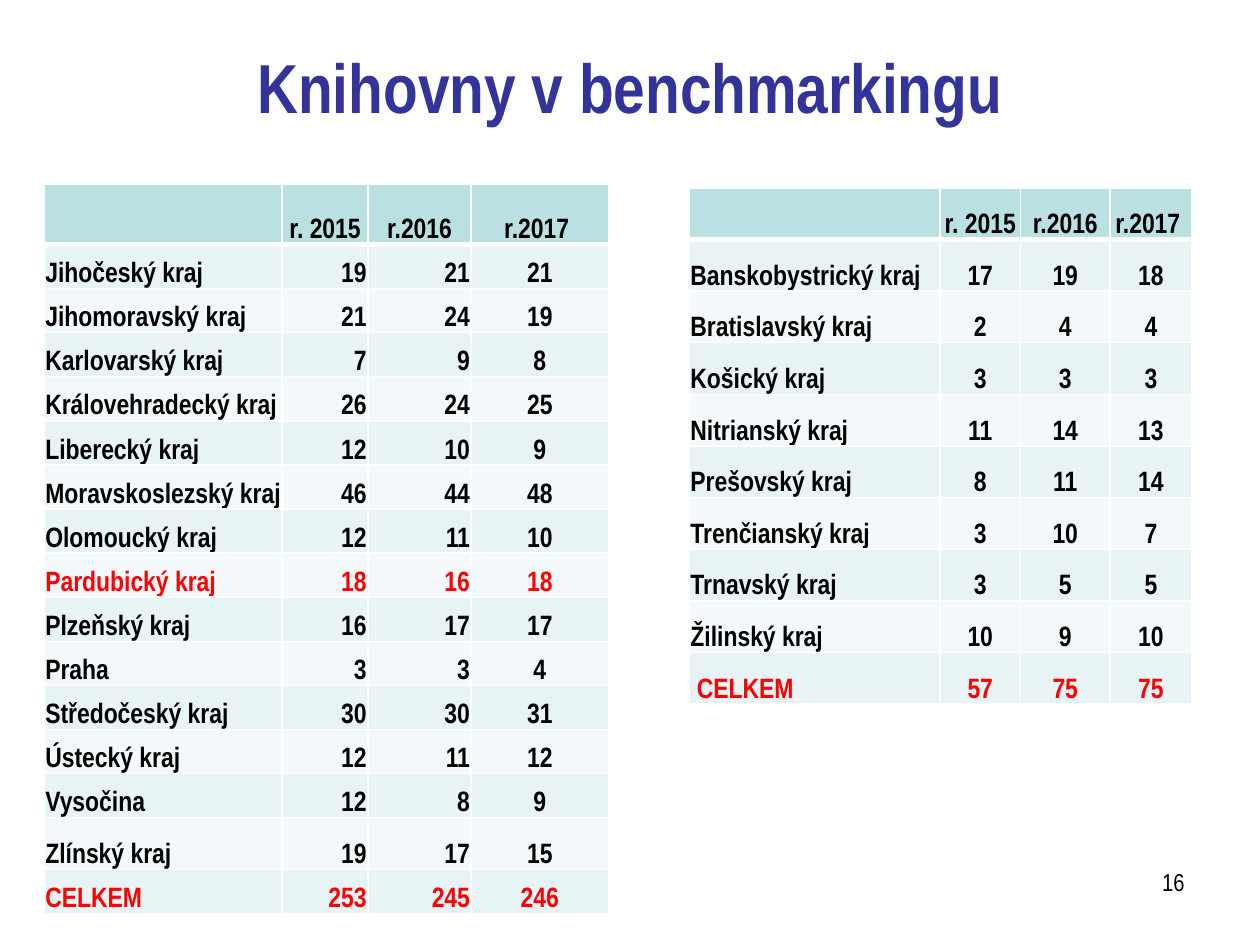
import pptx
import pptx.dml.color
import pptx.enum.text
import pptx.oxml
import pptx.util
from pptx.util import Inches

FONT = "Arial Narrow"
BLACK, RED, NAVY, WHITE = "000000", "FF0000", "333399", "FFFFFF"
HEADER_FILL, ROW_FILLS = "BBE0E3", ("E7F3F4", "F3F9FA")
ALIGN = pptx.enum.text.PP_ALIGN
ANCHOR = pptx.enum.text.MSO_ANCHOR
HIGHLIGHTED = ("Pardubický kraj", "CELKEM", " CELKEM")
HEADER = ("", "r. 2015", "r.2016", "r.2017 ")

CZECH_REGIONS = [
    ("Jihočeský kraj", 19, 21, 21),
    ("Jihomoravský kraj", 21, 24, 19),
    ("Karlovarský kraj", 7, 9, 8),
    ("Královehradecký kraj", 26, 24, 25),
    ("Liberecký kraj", 12, 10, 9),
    ("Moravskoslezský kraj", 46, 44, 48),
    ("Olomoucký kraj", 12, 11, 10),
    ("Pardubický kraj", 18, 16, 18),
    ("Plzeňský kraj", 16, 17, 17),
    ("Praha", 3, 3, 4),
    ("Středočeský kraj", 30, 30, 31),
    ("Ústecký kraj", 12, 11, 12),
    ("Vysočina", 12, 8, 9),
    ("Zlínský kraj", 19, 17, 15),
    ("CELKEM", 253, 245, 246),
]
SLOVAK_REGIONS = [
    ("Banskobystrický kraj", 17, 19, 18),
    ("Bratislavský kraj", 2, 4, 4),
    ("Košický kraj", 3, 3, 3),
    ("Nitrianský kraj", 11, 14, 13),
    ("Prešovský kraj", 8, 11, 14),
    ("Trenčianský kraj", 3, 10, 7),
    ("Trnavský kraj", 3, 5, 5),
    ("Žilinský kraj", 10, 9, 10),
    (" CELKEM", 57, 75, 75),
]


def rgb(color):
    return pptx.dml.color.RGBColor.from_string(color)


def style_paragraph(paragraph, text, size, color, align, bold):
    paragraph.text = text
    paragraph.alignment = align
    font = paragraph.font
    font.name, font.size, font.bold = FONT, pptx.util.Pt(size), bold
    font.color.rgb = rgb(color)


def add_text(slide, text, left, top, width, height, size, color, align,
             bold=False, anchor=ANCHOR.TOP):
    frame = slide.shapes.add_textbox(
        Inches(left), Inches(top), Inches(width), Inches(height)).text_frame
    frame.word_wrap = True
    frame.vertical_anchor = anchor
    style_paragraph(frame.paragraphs[0], text, size, color, align, bold)


def set_borders(cell, top, bottom):
    """Draw white cell borders, 1 pt at the sides; must precede the fill."""
    properties = cell._tc.get_or_add_tcPr()
    for side, points in (("L", 1), ("R", 1), ("T", top), ("B", bottom)):
        properties.append(pptx.oxml.parse_xml(
            '<a:ln%s xmlns:a="http://schemas.openxmlformats.org/drawingml/2006/main" w="%d">'
            '<a:solidFill><a:srgbClr val="%s"/></a:solidFill></a:ln%s>'
            % (side, pptx.util.Pt(points), WHITE, side)))


def fill_cell(cell, text, color, fill, align, top, bottom):
    set_borders(cell, top, bottom)
    cell.fill.solid()
    cell.fill.fore_color.rgb = rgb(fill)
    cell.margin_left = cell.margin_right = cell.margin_top = Inches(0.01)
    cell.margin_bottom = 0
    cell.vertical_anchor = ANCHOR.BOTTOM
    style_paragraph(cell.text_frame.paragraphs[0], text, 16, color, align, True)


def add_region_table(slide, left, top, widths, heights, regions, year_aligns):
    table = slide.shapes.add_table(
        len(heights), len(widths), Inches(left), Inches(top),
        Inches(sum(widths)), Inches(sum(heights))).table
    for column, width in zip(table.columns, widths):
        column.width = Inches(width)
    for row, height in zip(table.rows, heights):
        row.height = Inches(height)
    for r, values in enumerate([HEADER] + regions):
        is_header = r == 0
        fill = HEADER_FILL if is_header else ROW_FILLS[(r - 1) % 2]
        color = RED if values[0] in HIGHLIGHTED else BLACK
        aligns = [ALIGN.CENTER] * 4 if is_header else [ALIGN.LEFT, *year_aligns]
        for c, (value, align) in enumerate(zip(values, aligns)):
            fill_cell(table.cell(r, c), str(value), color, fill, align,
                      top=3 if r == 1 else 1, bottom=3 if is_header else 1)


def main():
    presentation = pptx.Presentation()
    presentation.slide_width, presentation.slide_height = Inches(10), Inches(7.5)
    slide = presentation.slides.add_slide(presentation.slide_layouts[6])

    add_text(slide, "Knihovny v benchmarkingu", 0.5, 0.3, 9, 0.77, 39.6, NAVY,
             ALIGN.CENTER, bold=True, anchor=ANCHOR.MIDDLE)
    add_region_table(slide, 0.35, 1.46, (1.89, 0.68, 0.82, 1.09),
                     [0.48] + [0.35] * 13 + [0.41, 0.35], CZECH_REGIONS,
                     (ALIGN.RIGHT, ALIGN.RIGHT, ALIGN.CENTER))
    add_region_table(slide, 5.47, 1.49, (1.99, 0.64, 0.71, 0.65),
                     [0.41] * 10, SLOVAK_REGIONS, [ALIGN.CENTER] * 3)
    add_text(slide, "16", 7.17, 6.83, 2.33, 0.52, 14, BLACK, ALIGN.RIGHT)

    presentation.save("out.pptx")


if __name__ == "__main__":
    main()
